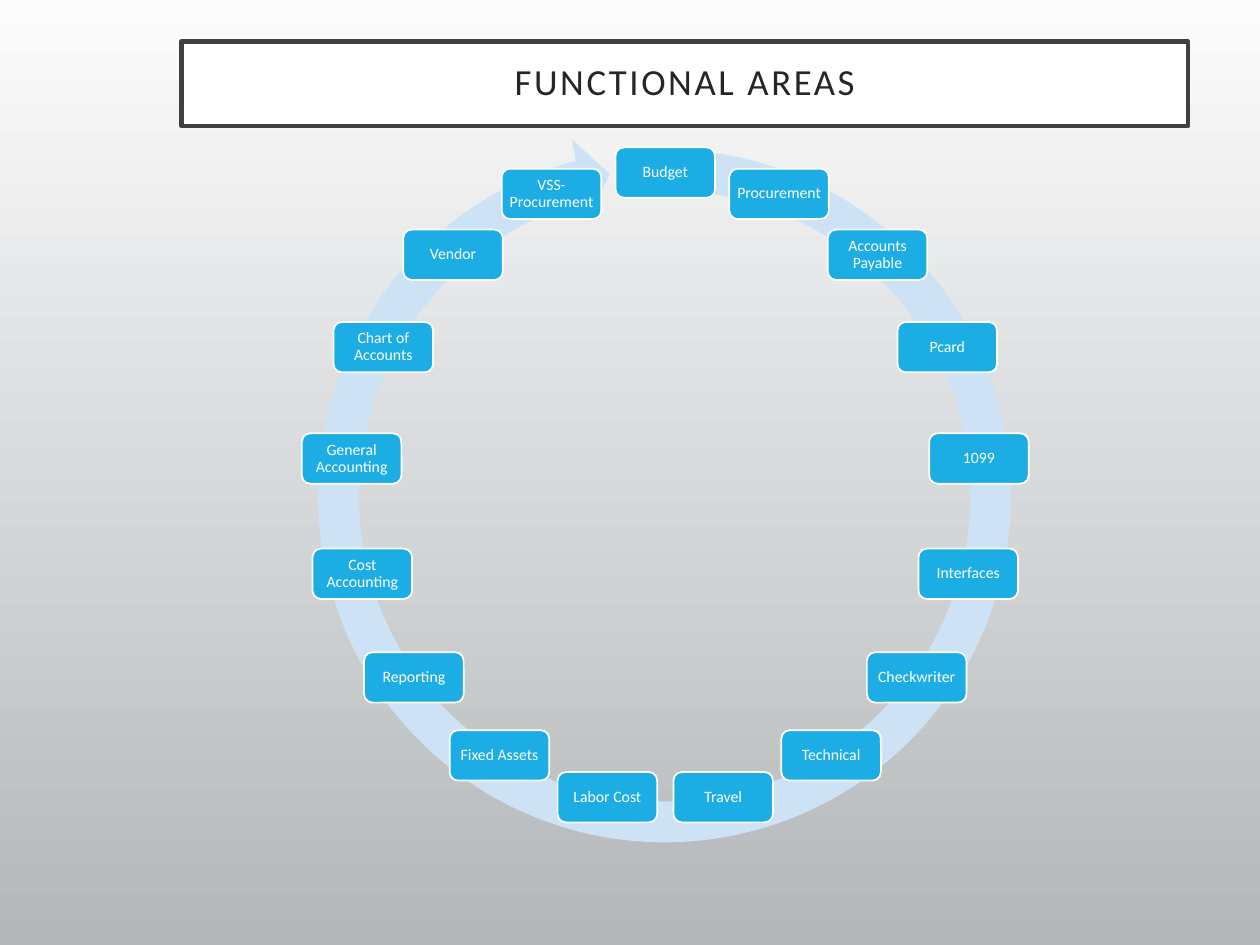
import math

from pptx import Presentation
from pptx import util as u
from pptx.dml.color import RGBColor
from pptx.enum import shapes, text

WHITE = RGBColor(0xFF, 0xFF, 0xFF)
INK = RGBColor(0x26, 0x26, 0x26)
FRAME = RGBColor(0x40, 0x40, 0x40)
BLUE = RGBColor(0x1C, 0xAD, 0xE4)
PALE = RGBColor(0xCD, 0xE3, 0xF5)
TOP = RGBColor(0xFC, 0xFC, 0xFC)
BOTTOM = RGBColor(0xB4, 0xB7, 0xB9)

FONT = "Calibri"
AREAS = [
    "Budget", "Procurement", "Accounts Payable", "Pcard", "1099",
    "Interfaces", "Checkwriter", "Technical", "Travel", "Labor Cost",
    "Fixed Assets", "Reporting", "Cost Accounting", "General Accounting",
    "Chart of Accounts", "Vendor", "VSS- Procurement",
]

# Ring of areas, in inches
MID_X, MID_Y, RADIUS = 5.28, 3.87, 2.5
NODE_W, NODE_H = 0.79, 0.4


def add_form(slide, kind, box, fill, line=None, width=1):
    form = slide.shapes.add_shape(kind, *[u.Inches(n) for n in box])
    form.shadow.inherit = False
    form.fill.solid()
    form.fill.fore_color.rgb = fill
    if line is None:
        form.line.fill.background()
    else:
        form.line.color.rgb = line
        form.line.width = u.Pt(width)
    return form


def add_words(form, words, size, color, inset):
    frame = form.text_frame
    frame.word_wrap = True
    frame.vertical_anchor = text.MSO_ANCHOR.MIDDLE
    frame.margin_left = frame.margin_right = u.Inches(inset)
    frame.margin_top = frame.margin_bottom = u.Inches(inset)
    para = frame.paragraphs[0]
    para.alignment = text.PP_ALIGN.CENTER
    para.line_spacing = 0.9
    run = para.add_run()
    run.text = words
    run.font.name = FONT
    run.font.size = u.Pt(size)
    run.font.color.rgb = color
    return run


def set_back(slide):
    fill = slide.background.fill
    fill.gradient()
    fill.gradient_angle = 270
    for stop, color in zip(fill.gradient_stops, (TOP, BOTTOM)):
        stop.color.rgb = color


def add_title(slide, words):
    form = add_form(slide, shapes.MSO_SHAPE.RECTANGLE,
                    (1.44, 0.33, 7.99, 0.67), WHITE, FRAME, 2.5)
    run = add_words(form, words, 21, INK, 0.1)
    run.font._element.set("spc", "150")  # letter spacing


def add_arrow(slide):
    form = add_form(slide, shapes.MSO_SHAPE.CIRCULAR_ARROW,
                    (2.35, 1.01, 5.85, 5.85), PALE)
    # Band and head widths are percentages, the rest are degrees
    form.adjustments[0] = 5.54 / 100
    for i, angle in enumerate((5.51, 254.81, 275.3), start=1):
        form.adjustments[i] = angle * 0.6
    form.adjustments[4] = 5.76 / 100


def add_node(slide, words, angle):
    left = MID_X + RADIUS * math.sin(angle) - NODE_W / 2
    top = MID_Y - RADIUS * math.cos(angle) - NODE_H / 2
    form = add_form(slide, shapes.MSO_SHAPE.ROUNDED_RECTANGLE,
                    (left, top, NODE_W, NODE_H), BLUE, WHITE)
    add_words(form, words, 9, WHITE, 0.04)


def main():
    deck = Presentation()
    deck.slide_width, deck.slide_height = u.Inches(10), u.Inches(7.5)
    slide = deck.slides.add_slide(deck.slide_layouts[6])
    set_back(slide)
    add_title(slide, "FUNCTIONAL AREAS")

    # Cycle, clockwise from the top
    add_arrow(slide)
    step = math.tau / len(AREAS)
    for i, area in enumerate(AREAS):
        add_node(slide, area, i * step)

    deck.save("out.pptx")


if __name__ == "__main__":
    main()
